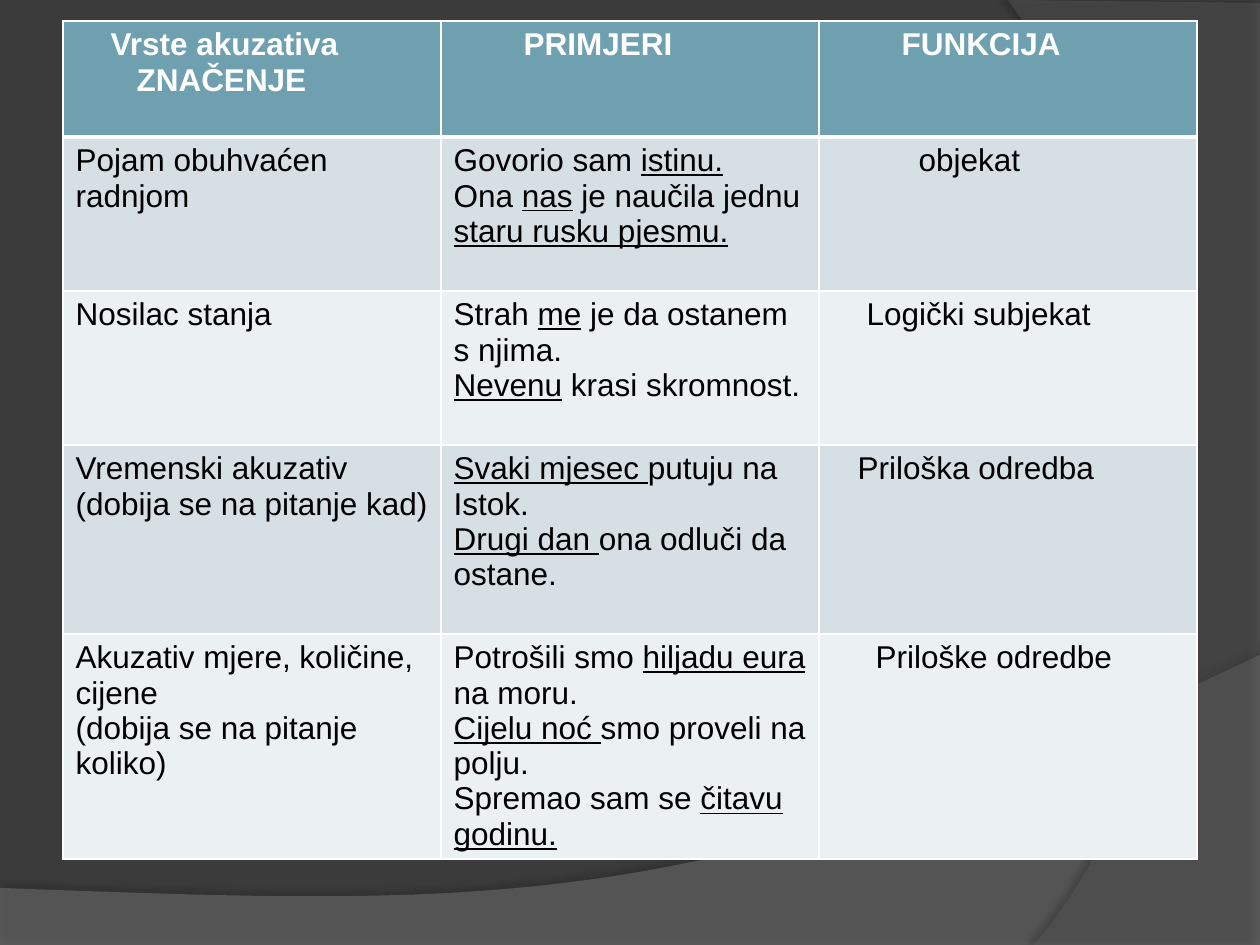
from lxml import etree
from pptx import Presentation
from pptx.dml.color import RGBColor
from pptx.enum.text import PP_ALIGN
from pptx.oxml.ns import qn
from pptx.util import Emu, Pt

SCALE = 914400 / 126
LEFT = PP_ALIGN.LEFT
BLANK_LAYOUT = 6
SLIDE_WIDTH, SLIDE_HEIGHT = 1260, 945

THEME = {
    "font": "Arial", "size": 18,
    "background": "3B3B3B", "wave": "7F7F7F", "arc": "5E5E5E", "shadow": "000000",
    "header": "6EA0B0", "header_text": "FFFFFF", "text": "000000",
    "bands": ("D5DFE4", "EBF0F2"),
    "border": "FFFFFF", "thin": 1, "thick": 3,
}

# Each cell lists paragraphs as (indent in px, text); underscores enclose underlined words.
ROWS = [
    [[(35, "Vrste akuzativa"), (61, "ZNAČENJE")],
     [(70, "PRIMJERI")],
     [(70, "FUNKCIJA")]],
    [[(0, "Pojam obuhvaćen radnjom")],
     [(0, "Govorio sam _istinu._"),
      (0, "Ona _nas_ je naučila jednu _staru rusku pjesmu._")],
     [(87, "objekat")]],
    [[(0, "Nosilac stanja")],
     [(0, "Strah _me_ je da ostanem s njima."),
      (0, "_Nevenu_ krasi skromnost.")],
     [(35, "Logički subjekat")]],
    [[(0, "Vremenski akuzativ"), (0, "(dobija se na pitanje kad)")],
     [(0, "_Svaki mjesec _putuju na Istok."),
      (0, "_Drugi dan _ona odluči da ostane.")],
     [(26, "Priloška odredba")]],
    [[(0, "Akuzativ mjere, količine, cijene"), (0, "(dobija se na pitanje koliko)")],
     [(0, "Potrošili smo _hiljadu eura _na moru."),
      (0, "_Cijelu noć _smo proveli na polju."),
      (0, "Spremao sam se _čitavu godinu._")],
     [(44, "Priloške odredbe")]],
]
TABLE_LEFT, TABLE_TOP, COLUMN_WIDTH = 63, 21, 378
ROW_HEIGHTS = (116, 154, 154, 189, 225)

# Straight corners first, then the four control points of the curved edge.
BACKDROPS = [
    {"corners": [(0, 945), (1260, 945)],
     "curve": [(1260, 655), (704, 919), (493, 906), (0, 888)],
     "color": THEME["wave"], "opacity": 45,
     "shadow": {"opacity": 35, "blur": 4, "distance": 3.5, "angle": 270}},
    {"corners": [(1260, 3), (1260, 945)],
     "curve": [(1034, 945), (1178, 780), (1283, 378), (1008, 0)],
     "color": THEME["arc"], "opacity": 40,
     "shadow": {"opacity": 45, "blur": 4, "distance": 4, "angle": 180}},
]


def px(value):
    return Emu(round(value * SCALE))


def rgb(color):
    return RGBColor.from_string(color)


def add_element(parent, tag, **attributes):
    values = {name: str(value) for name, value in attributes.items()}
    return etree.SubElement(parent, qn(tag), values)


def curve_points(controls, steps=48):
    """Sample a cubic Bézier curve at equal parameter steps."""
    points = []
    for step in range(steps + 1):
        t = step / steps
        weights = ((1 - t) ** 3, 3 * t * (1 - t) ** 2, 3 * t ** 2 * (1 - t), t ** 3)
        points.append(tuple(sum(weight * point[axis] for weight, point in zip(weights, controls))
                            for axis in (0, 1)))
    return points


def add_backdrop(slide, corners, curve, color, opacity, shadow):
    points = corners + curve_points(curve)
    # Points go in as EMU so that the sampled curve keeps its precision.
    outline = [(px(x), px(y)) for x, y in points]
    builder = slide.shapes.build_freeform(*outline[0])
    builder.add_line_segments(outline[1:], close=True)
    shape = builder.convert_to_shape()
    shape.fill.solid()
    shape.fill.fore_color.rgb = rgb(color)
    shape.line.fill.background()
    properties = shape._element.spPr
    fill_color = properties.find(qn("a:solidFill")).find(qn("a:srgbClr"))
    add_element(fill_color, "a:alpha", val=opacity * 1000)
    effects = add_element(properties, "a:effectLst")
    outer = add_element(effects, "a:outerShdw", blurRad=Pt(shadow["blur"]),
                        dist=Pt(shadow["distance"]), dir=shadow["angle"] * 60000,
                        algn="ctr", rotWithShape=0)
    shade = add_element(outer, "a:srgbClr", val=THEME["shadow"])
    add_element(shade, "a:alpha", val=shadow["opacity"] * 1000)


def write_text(paragraph, text, color, bold=False, indent=0):
    paragraph.alignment = LEFT
    properties = paragraph._p.get_or_add_pPr()
    properties.set("marL", str(px(indent)))
    properties.set("indent", "0")
    for index, part in enumerate(text.split("_")):
        if part:
            run = paragraph.add_run()
            run.text = part
            run.font.name = THEME["font"]
            run.font.size = Pt(THEME["size"])
            run.font.bold = bold
            run.font.underline = index % 2 == 1
            run.font.color.rgb = rgb(color)


def set_borders(cell, **widths):
    properties = cell._tc.get_or_add_tcPr()
    for side in "LRTB":
        line = add_element(properties, f"a:ln{side}", w=Pt(widths.get(side, THEME["thin"])))
        fill = add_element(line, "a:solidFill")
        add_element(fill, "a:srgbClr", val=THEME["border"])


def fill_cell(cell, paragraphs, row_index):
    is_header = row_index == 0
    edges = {0: {"B": THEME["thick"]}, 1: {"T": THEME["thick"]}}
    set_borders(cell, **edges.get(row_index, {}))
    cell.fill.solid()
    band = THEME["bands"][(row_index - 1) % 2]
    cell.fill.fore_color.rgb = rgb(THEME["header"] if is_header else band)
    frame = cell.text_frame
    for index, (indent, text) in enumerate(paragraphs):
        paragraph = frame.add_paragraph() if index else frame.paragraphs[0]
        write_text(paragraph, text, bold=is_header, indent=indent,
                   color=THEME["header_text"] if is_header else THEME["text"])


def add_accusative_table(slide):
    column_count = len(ROWS[0])
    frame = slide.shapes.add_table(len(ROWS), column_count, px(TABLE_LEFT), px(TABLE_TOP),
                                   px(COLUMN_WIDTH * column_count), px(sum(ROW_HEIGHTS)))
    table = frame.table
    for column in table.columns:
        column.width = px(COLUMN_WIDTH)
    for row_index, (row, height) in enumerate(zip(table.rows, ROW_HEIGHTS)):
        row.height = px(height)
        for cell, paragraphs in zip(row.cells, ROWS[row_index]):
            fill_cell(cell, paragraphs, row_index)


def main():
    presentation = Presentation()
    presentation.slide_width = px(SLIDE_WIDTH)
    presentation.slide_height = px(SLIDE_HEIGHT)
    slide = presentation.slides.add_slide(presentation.slide_layouts[BLANK_LAYOUT])
    slide.background.fill.solid()
    slide.background.fill.fore_color.rgb = rgb(THEME["background"])
    for backdrop in BACKDROPS:
        add_backdrop(slide, **backdrop)
    add_accusative_table(slide)
    presentation.save("out.pptx")


if __name__ == "__main__":
    main()
